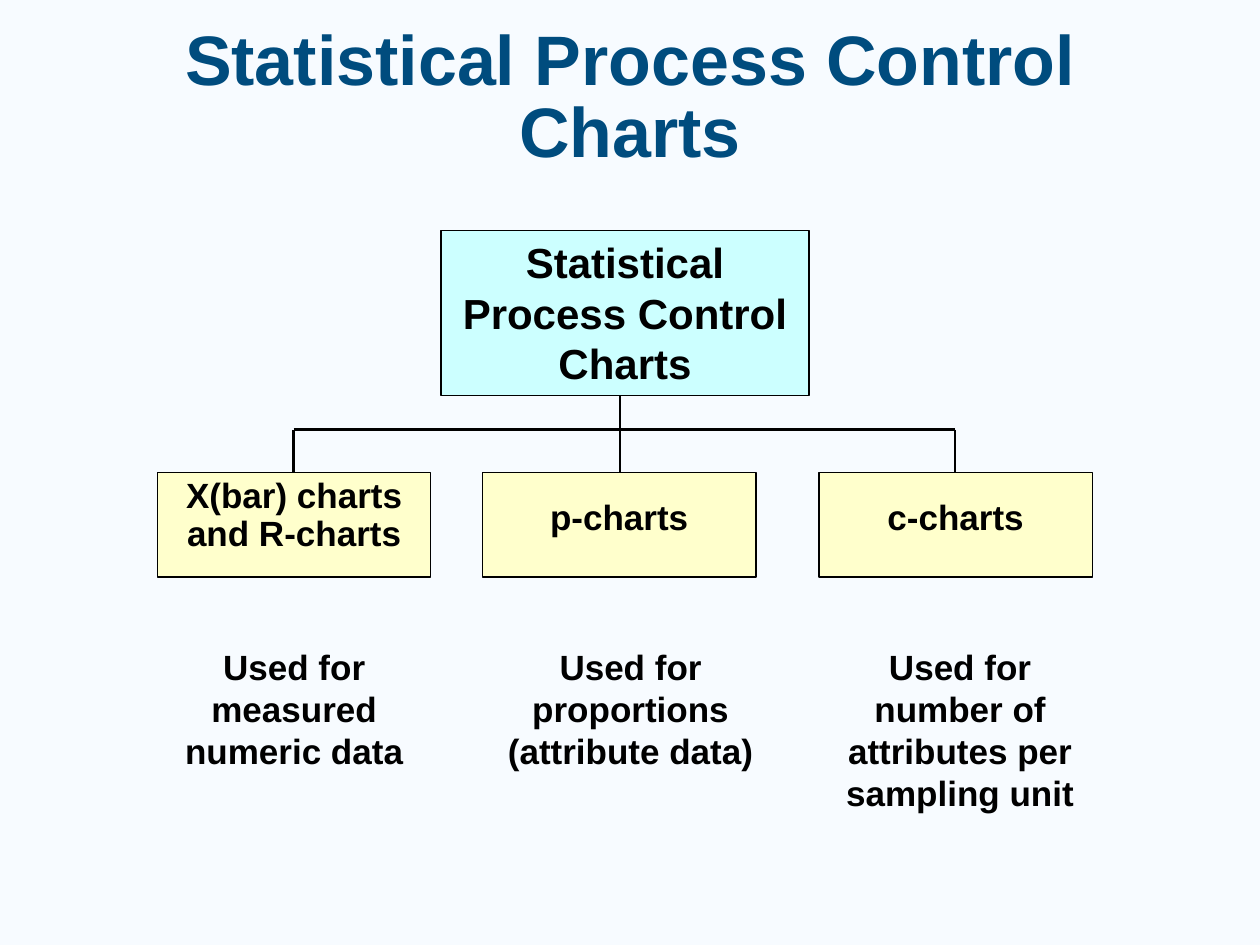
"""Build a slide showing the tree of statistical process control charts."""
from typing import NamedTuple

import pptx
import pptx.dml.color
import pptx.enum.shapes
import pptx.enum.text
import pptx.oxml.ns
import pptx.util
from lxml import etree

Inches = pptx.util.Inches
Anchor = pptx.enum.text.MSO_ANCHOR

COLOURS = {
    "background": "F7FBFF",
    "title": "004C7E",
    "root": "CCFFFF",
    "branch": "FFFFCC",
    "ink": "000000",
}
TITLE = "Statistical Process Control Charts"
BRANCH_WIDTH, BRANCH_HEIGHT, BRANCH_TOP = 2.17, 0.83, 3.75
ROOT_BOTTOM, BUS_TOP, USE_TOP = 3.08, 3.41, 5.07


class Area(NamedTuple):
    left: float
    top: float
    width: float
    height: float


class Branch(NamedTuple):
    label: str
    left: float
    label_top: float
    label_height: float
    stem: float
    use: str
    use_area: Area


BRANCHES = [
    Branch("X(bar) charts and R-charts", 1.25, 3.75, 0.71, 2.33,
           "Used for measured numeric data", Area(1.25, USE_TOP, BRANCH_WIDTH, 1.1)),
    Branch("p-charts", 3.83, 3.92, 0.4, 4.92,
           "Used for proportions (attribute data)", Area(3.92, USE_TOP, BRANCH_WIDTH, 1.1)),
    Branch("c-charts", 6.5, 3.92, 0.4, 7.58,
           "Used for number of attributes per sampling unit", Area(6.58, USE_TOP, 2.08, 1.43)),
]


def colour(name: str) -> pptx.dml.color.RGBColor:
    """Return the named colour."""
    return pptx.dml.color.RGBColor.from_string(COLOURS[name])


def apply_format(target: object, values: dict) -> None:
    """Set each attribute of the target from the format values."""
    for name, value in values.items():
        setattr(target, name, value)


def write_text(shape, text: str, size: int, spacing: float = 1.0,
               ink: str = "ink", anchor=Anchor.TOP) -> None:
    """Write one bold centred paragraph into a shape."""
    frame = shape.text_frame
    apply_format(frame, {"word_wrap": True, "vertical_anchor": anchor})
    paragraph = frame.paragraphs[0]
    apply_format(paragraph, {"alignment": pptx.enum.text.PP_ALIGN.CENTER,
                             "line_spacing": spacing})
    run = paragraph.add_run()
    run.text = text
    apply_format(run.font, {"name": "Arial", "size": pptx.util.Pt(size), "bold": True})
    run.font.color.rgb = colour(ink)


def add_label(slide, area: Area, text: str, size: int, **options):
    """Add a text box."""
    shape = slide.shapes.add_textbox(*map(Inches, area))
    write_text(shape, text, size, **options)
    return shape


def add_box(slide, area: Area, fill: str):
    """Add an outlined rectangle."""
    shape = slide.shapes.add_shape(
        pptx.enum.shapes.MSO_SHAPE.RECTANGLE, *map(Inches, area))
    shape.shadow.inherit = False
    shape.fill.solid()
    shape.fill.fore_color.rgb = colour(fill)
    shape.line.color.rgb = colour("ink")
    shape.line.width = pptx.util.Pt(0.75)
    return shape


def add_line(slide, start: tuple[float, float], end: tuple[float, float]) -> None:
    """Add a straight connector without a shadow."""
    line = slide.shapes.add_connector(
        pptx.enum.shapes.MSO_CONNECTOR.STRAIGHT, *map(Inches, start + end))
    line.line.color.rgb = colour("ink")
    line.line.width = pptx.util.Pt(1.5)
    etree.SubElement(line._element.spPr, pptx.oxml.ns.qn("a:effectLst"))


def add_branch(slide, branch: Branch) -> None:
    """Add a chart type with its box, label and use."""
    add_box(slide, Area(branch.left, BRANCH_TOP, BRANCH_WIDTH, BRANCH_HEIGHT), "branch")
    label_area = Area(branch.left, branch.label_top, BRANCH_WIDTH, branch.label_height)
    add_label(slide, label_area, branch.label, 20, spacing=0.9)
    add_label(slide, branch.use_area, branch.use, 20)


def main() -> None:
    """Build and save the presentation."""
    presentation = pptx.Presentation()
    apply_format(presentation, {"slide_width": Inches(10), "slide_height": Inches(7.5)})
    slide = presentation.slides.add_slide(presentation.slide_layouts[6])
    slide.background.fill.solid()
    slide.background.fill.fore_color.rgb = colour("background")

    add_label(slide, Area(0.74, 0.38, 8.52, 0.83), TITLE, 40,
              spacing=0.85, ink="title", anchor=Anchor.MIDDLE)

    first, middle, last = (branch.stem for branch in BRANCHES)
    add_line(slide, (first, BUS_TOP), (last, BUS_TOP))
    for stem, top in ((first, BUS_TOP), (middle, ROOT_BOTTOM), (last, BUS_TOP)):
        add_line(slide, (stem, top), (stem, BRANCH_TOP))

    root = add_box(slide, Area(3.5, 1.83, 2.92, 1.31), "root")
    write_text(root, TITLE, 24)
    for branch in BRANCHES:
        add_branch(slide, branch)

    presentation.save("out.pptx")


if __name__ == "__main__":
    main()
